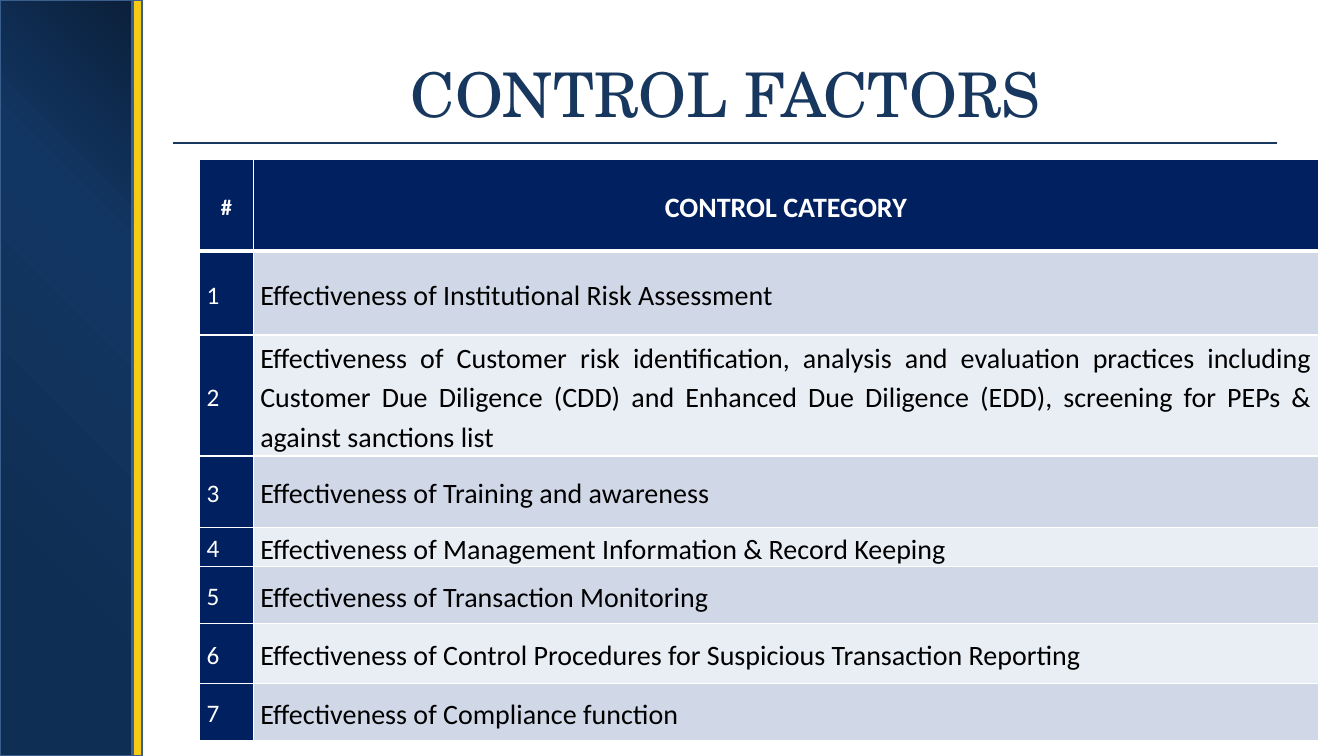
"""Build the control factors slide with its side band, title and table."""
from lxml import etree
from pptx import Presentation
from pptx.dml.color import RGBColor
from pptx.enum import shapes, text
from pptx.oxml import ns, parse_xml
from pptx.util import Cm, Pt

WHITE = RGBColor(0xFF, 0xFF, 0xFF)
BLACK = RGBColor(0x00, 0x00, 0x00)
NAVY = RGBColor(0x00, 0x20, 0x60)
TITLE_BLUE = RGBColor(0x17, 0x37, 0x5E)
EDGE_BLUE = RGBColor(0x3A, 0x5F, 0x8C)
GOLD = RGBColor(0xF6, 0xCB, 0x16)
BAND_DARK = RGBColor(0x0B, 0x20, 0x3B)
BAND_LIGHT = RGBColor(0x12, 0x36, 0x63)
BAND_MID = RGBColor(0x0F, 0x2E, 0x53)
ROW_TINTS = (RGBColor(0xD0, 0xD8, 0xE8), RGBColor(0xE9, 0xED, 0xF4))

BAND_STOPS = ((0, BAND_DARK), (29, BAND_LIGHT), (79, BAND_MID))
LEFT, CENTER, JUSTIFY = (
    text.PP_ALIGN.LEFT, text.PP_ALIGN.CENTER, text.PP_ALIGN.JUSTIFY)
CELL_FORMAT = {
    "margin_left": Cm(0.18), "margin_right": Cm(0.18),
    "margin_top": 0, "margin_bottom": 0,
    "vertical_anchor": text.MSO_ANCHOR.MIDDLE,
}
HEADER = ("#", "CONTROL CATEGORY", 2.31)
CONTROLS = (
    ("Effectiveness of Institutional Risk Assessment", 2.11),
    ("Effectiveness of Customer risk identification, analysis and evaluation "
     "practices including Customer Due Diligence (CDD) and Enhanced Due "
     "Diligence (EDD), screening for PEPs & against sanctions list", 3.05),
    ("Effectiveness of Training and awareness", 1.8),
    ("Effectiveness of Management Information & Record Keeping", 0.97),
    ("Effectiveness of Transaction Monitoring", 1.45),
    ("Effectiveness of Control Procedures for Suspicious Transaction Reporting",
     1.5),
    ("Effectiveness of Compliance function", 1.45),
)


def set_format(target, values):
    """Set each named attribute of the target."""
    for name, value in values.items():
        setattr(target, name, value)


def write(paragraph, words, size, color, align, font="Calibri", bold=False):
    """Put one formatted run into a paragraph."""
    paragraph.alignment = align
    run = paragraph.add_run()
    run.text = words
    set_format(run.font, {"name": font, "size": Pt(size), "bold": bold})
    run.font.color.rgb = color


def add_bar(slide, left, width, color):
    """Add a full-height outlined bar."""
    bar = slide.shapes.add_shape(
        shapes.MSO_SHAPE.RECTANGLE, Cm(left), 0, Cm(width), Cm(19.05))
    bar.shadow.inherit = False
    bar.fill.solid()
    bar.fill.fore_color.rgb = color
    bar.line.color.rgb = EDGE_BLUE
    bar.line.width = Pt(2)
    return bar


def shade_from_corner(bar, stops):
    """Replace a solid fill by a round gradient from the top right corner."""
    marks = "".join(
        f'<a:gs pos="{place * 1000}"><a:srgbClr val="{color}"/></a:gs>'
        for place, color in stops)
    gradient = parse_xml(
        f'<a:gradFill {ns.nsdecls("a")} rotWithShape="1">'
        f'<a:gsLst>{marks}</a:gsLst><a:path path="circle">'
        '<a:fillToRect l="100000" b="100000"/></a:path></a:gradFill>')
    properties = bar.element.spPr
    properties.replace(properties.find(ns.qn("a:solidFill")), gradient)


def add_title(slide, words):
    """Add the centred title."""
    title = slide.shapes.add_textbox(Cm(4.39), Cm(0.74), Cm(27.81), Cm(3.18))
    frame = title.text_frame
    set_format(frame, {"word_wrap": True,
                       "vertical_anchor": text.MSO_ANCHOR.MIDDLE})
    write(frame.paragraphs[0], words, 44, TITLE_BLUE, CENTER,
          font="TeX Gyre Schola")


def add_rule(slide):
    """Add the thin rule below the title."""
    rule = slide.shapes.add_connector(
        shapes.MSO_CONNECTOR.STRAIGHT, Cm(4.37), Cm(3.61), Cm(32.18), Cm(3.61))
    rule.line.color.rgb = TITLE_BLUE
    rule.line.width = Pt(1.5)
    etree.SubElement(rule.element.spPr, ns.qn("a:effectLst"))


def add_borders(cell, bottom):
    """Give a cell white borders with the stated bottom width."""
    properties = cell._tc.get_or_add_tcPr()
    for side, width in (("L", 1), ("R", 1), ("T", 1), ("B", bottom)):
        properties.append(parse_xml(
            f'<a:ln{side} {ns.nsdecls("a")} w="{Pt(width)}"><a:solidFill>'
            f'<a:srgbClr val="{WHITE}"/></a:solidFill></a:ln{side}>'))


def fill_cell(cell, words, size, color, align, tint, bold=False, bottom=1):
    """Format one table cell and write its text."""
    set_format(cell, CELL_FORMAT)
    add_borders(cell, bottom)
    cell.fill.solid()
    cell.fill.fore_color.rgb = tint
    paragraph = cell.text_frame.paragraphs[0]
    paragraph.line_spacing = 1.15
    write(paragraph, words, size, color, align, bold=bold)


def add_controls(slide):
    """Add the numbered table of control categories."""
    heights = [HEADER[2]] + [height for _, height in CONTROLS]
    table = slide.shapes.add_table(
        len(heights), 2, Cm(5.03), Cm(4.02), Cm(28.2), Cm(sum(heights))).table
    for column, width in zip(table.columns, (1.35, 26.85)):
        column.width = Cm(width)
    for row, height in zip(table.rows, heights):
        row.height = Cm(height)
    for column, size in enumerate((16, 20)):
        fill_cell(table.cell(0, column), HEADER[column], size, WHITE, CENTER,
                  NAVY, bold=True, bottom=3)
    for number, (control, _) in enumerate(CONTROLS, start=1):
        fill_cell(table.cell(number, 0), str(number), 18, WHITE, LEFT, NAVY)
        fill_cell(table.cell(number, 1), control, 20, BLACK, JUSTIFY,
                  ROW_TINTS[(number - 1) % 2])


def main():
    """Build and save the slide."""
    deck = Presentation()
    set_format(deck, {"slide_width": Cm(33.87), "slide_height": Cm(19.05)})
    slide = deck.slides.add_slide(deck.slide_layouts[6])
    band = add_bar(slide, 0, 3.33, BAND_DARK)
    shade_from_corner(band, BAND_STOPS)
    add_bar(slide, 3.33, 0.25, GOLD)
    add_title(slide, "CONTROL FACTORS")
    add_controls(slide)
    add_rule(slide)
    deck.save("out.pptx")


if __name__ == "__main__":
    main()
